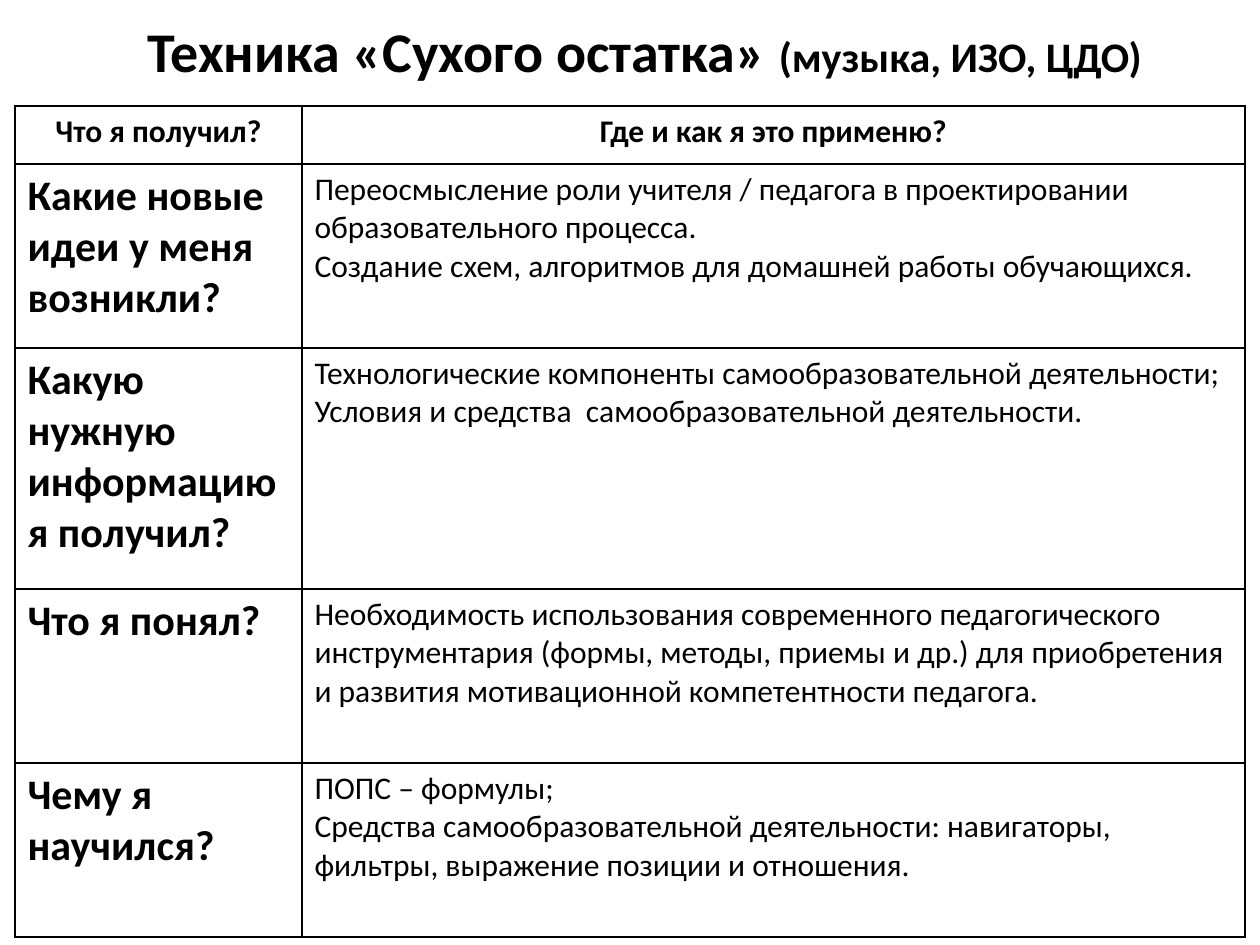
from lxml import etree
from pptx import Presentation, util as u
from pptx.dml.color import RGBColor
from pptx.enum import text
from pptx.oxml.ns import qn

COLORS = {"ink": "000000", "paper": "FFFFFF"}
EMU_PER_PX = 914400 / 126

HEADINGS = ["Что я получил?", "Где и как я это применю?"]
ANSWERS = [
    ("Какие новые идеи у меня возникли?",
     ["Переосмысление роли учителя / педагога в проектировании образовательного процесса.",
      "Создание схем, алгоритмов для домашней работы обучающихся."]),
    ("Какую нужную информацию я получил?",
     ["Технологические компоненты самообразовательной деятельности;",
      "Условия и средства  самообразовательной деятельности."]),
    ("Что я понял?",
     ["Необходимость использования современного педагогического  инструментария "
      "(формы, методы, приемы и др.) для приобретения и развития "
      "мотивационной компетентности педагога."]),
    ("Чему я научился?",
     ["ПОПС – формулы;",
      "Средства самообразовательной деятельности: навигаторы, фильтры, "
      "выражение позиции и отношения."]),
]


def px(length):
    return u.Emu(round(length * EMU_PER_PX))


class ReflectionSlide:
    """Draws the title and the bordered reflection table on one slide."""

    font = "Calibri"
    border = u.Pt(1)

    def __init__(self, deck):
        self.slide = deck.slides.add_slide(deck.slide_layouts[6])

    def add_text(self, frame, paragraphs, align=text.PP_ALIGN.LEFT):
        for index, runs in enumerate(paragraphs):
            paragraph = frame.add_paragraph() if index else frame.paragraphs[0]
            paragraph.alignment = align
            for words, size, bold in runs:
                run = paragraph.add_run()
                run.text = words
                run.font.name = self.font
                run.font.size = u.Pt(size)
                run.font.bold = bold
                run.font.color.rgb = RGBColor.from_string(COLORS["ink"])

    def title(self, left, top, width, height, runs):
        frame = self.slide.shapes.add_textbox(*map(px, (left, top, width, height))).text_frame
        frame.word_wrap = True
        frame.vertical_anchor = text.MSO_ANCHOR.MIDDLE
        self.add_text(frame, [runs], text.PP_ALIGN.CENTER)

    def outline(self, cell):
        properties = cell._tc.get_or_add_tcPr()
        for position, side in enumerate(("lnL", "lnR", "lnT", "lnB")):
            line = etree.Element(qn(f"a:{side}"), w=str(int(self.border)))
            fill = etree.SubElement(line, qn("a:solidFill"))
            etree.SubElement(fill, qn("a:srgbClr"), val=COLORS["ink"])
            properties.insert(position, line)

    def table(self, left, top, widths, heights):
        frame = self.slide.shapes.add_table(
            len(heights), len(widths), px(left), px(top), px(sum(widths)), px(sum(heights)))
        grid = frame.table
        grid.horz_banding = False
        for column, width in zip(grid.columns, widths):
            column.width = px(width)
        for row, height in zip(grid.rows, heights):
            row.height = px(height)
        for cell in grid.iter_cells():
            cell.fill.solid()
            cell.fill.fore_color.rgb = RGBColor.from_string(COLORS["paper"])
            self.outline(cell)
        return grid


def main():
    deck = Presentation()
    deck.slide_width, deck.slide_height = px(1260), px(945)
    page = ReflectionSlide(deck)
    page.title(54, 16, 1181, 69, [("Техника «Сухого остатка» ", 32, True),
                                  ("(музыка, ИЗО, ЦДО)", 24, True)])
    reflection = page.table(15, 106, [287, 943], [58, 184, 241, 174, 174])
    for column, heading in enumerate(HEADINGS):
        page.add_text(reflection.cell(0, column).text_frame, [[(heading, 18, True)]],
                      text.PP_ALIGN.CENTER)
    for row, (question, answers) in enumerate(ANSWERS, start=1):
        page.add_text(reflection.cell(row, 0).text_frame, [[(question, 24, True)]])
        page.add_text(reflection.cell(row, 1).text_frame,
                      [[(answer, 18, False)] for answer in answers])
    deck.save("out.pptx")


if __name__ == "__main__":
    main()
